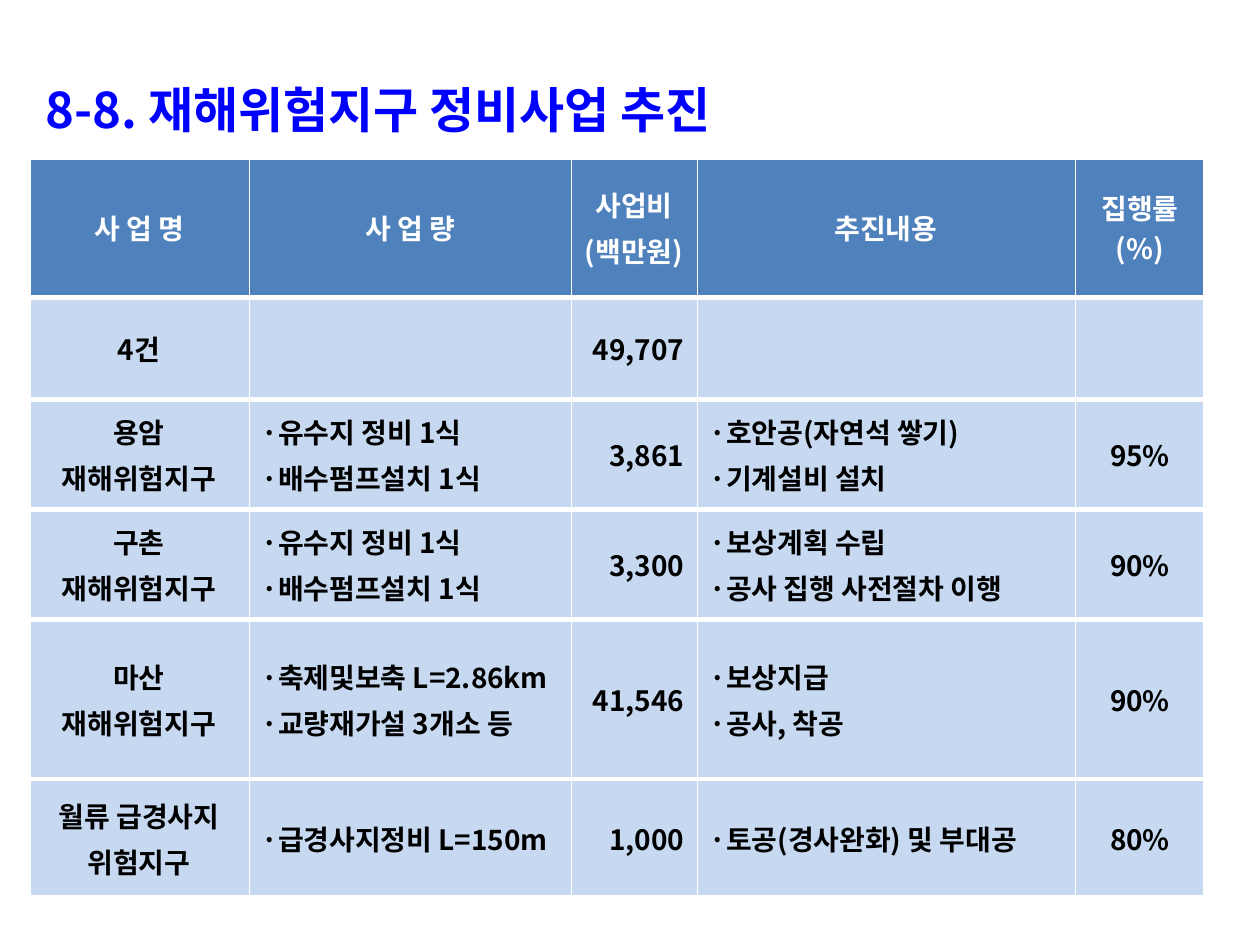
import pptx
import pptx.dml.color
import pptx.enum.shapes
import pptx.enum.text
import pptx.oxml
import pptx.oxml.ns
import pptx.util

SCALE = 914400 / 126
ALIGN = pptx.enum.text.PP_ALIGN
MIDDLE = pptx.enum.text.MSO_ANCHOR.MIDDLE
THEME = {
    "font": "Noto Sans CJK KR",
    "title": pptx.dml.color.RGBColor.from_string("0000FF"),
    "header": pptx.dml.color.RGBColor.from_string("4F81BD"),
    "body": pptx.dml.color.RGBColor.from_string("C6D9F1"),
    "white": pptx.dml.color.RGBColor.from_string("FFFFFF"),
    "black": pptx.dml.color.RGBColor.from_string("000000"),
    "title_size": pptx.util.Pt(28),
    "table_size": pptx.util.Pt(16),
    "thick": pptx.util.Pt(3),
    "thin": pptx.util.Pt(0.25),
    "outline": pptx.util.Pt(0.75),
}


def px(length):
    return pptx.util.Emu(round(length * SCALE))


def format_paragraph(paragraph, size, color, values):
    for name, value in values.items():
        setattr(paragraph, name, value)
    for run in paragraph.runs:
        for name, value in {"name": THEME["font"], "size": size, "bold": True}.items():
            setattr(run.font, name, value)
        run.font.color.rgb = color
        run.font._element.append(pptx.oxml.parse_xml(
            f'<a:ea {pptx.oxml.ns.nsdecls("a")} typeface="{THEME["font"]}"/>'))


presentation = pptx.Presentation()
presentation.slide_width, presentation.slide_height = px(1260), px(945)
slide = presentation.slides.add_slide(presentation.slide_layouts[6])

title = slide.shapes.add_shape(
    pptx.enum.shapes.MSO_SHAPE.RECTANGLE, px(25), px(45), px(1196), px(98))
title.shadow.inherit = False
title.fill.background()
title.line.color.rgb = THEME["white"]
title.line.width = THEME["outline"]
title.text_frame.word_wrap = True
title.text_frame.vertical_anchor = MIDDLE
title.text_frame.text = "8-8. 재해위험지구 정비사업 추진"
paragraph = title.text_frame.paragraphs[0]
properties = paragraph._p.get_or_add_pPr()
properties.set("marL", str(px(71)))
properties.set("indent", str(px(-63)))
format_paragraph(paragraph, THEME["title_size"], THEME["title"],
                 {"alignment": ALIGN.LEFT, "line_spacing": 1.5})

rows = [
    ("사 업 명", "사 업 량", "사업비\n(백만원)", "추진내용", "집행률\n(%)"),
    ("4건", "", "49,707", "", ""),
    ("용암\n재해위험지구", "·유수지 정비 1식\n·배수펌프설치 1식", "3,861",
     "·호안공(자연석 쌓기)\n·기계설비 설치", "95%"),
    ("구촌\n재해위험지구", "·유수지 정비 1식\n·배수펌프설치 1식", "3,300",
     "·보상계획 수립\n·공사 집행 사전절차 이행", "90%"),
    ("마산\n재해위험지구", "·축제및보축 L=2.86km\n·교량재가설 3개소 등", "41,546",
     "·보상지급\n·공사, 착공", "90%"),
    ("월류 급경사지\n위험지구", "·급경사지정비 L=150m", "1,000",
     "·토공(경사완화) 및 부대공", "80%"),
]
column_widths = [220, 322, 126, 378, 130]
row_heights = [110, 102, 110, 110, 160, 118]
body_alignments = [ALIGN.CENTER, ALIGN.LEFT, ALIGN.RIGHT, ALIGN.LEFT, ALIGN.CENTER]
last_column = len(column_widths) - 1

table = slide.shapes.add_table(
    len(rows), len(column_widths), px(29), px(158),
    px(sum(column_widths)), px(sum(row_heights))).table
for column, width in zip(table.columns, column_widths):
    column.width = px(width)
for row, height in zip(table.rows, row_heights):
    row.height = px(height)

for row_index, texts in enumerate(rows):
    is_header = row_index == 0
    for column_index, text in enumerate(texts):
        cell = table.cell(row_index, column_index)
        borders = {
            "lnL": THEME["thick" if column_index == 0 else "thin"],
            "lnR": THEME["thick" if column_index == last_column else "thin"],
            "lnT": THEME["thick"],
            "lnB": THEME["thick"],
        }
        cell_properties = cell._tc.get_or_add_tcPr()
        for tag, width in borders.items():
            cell_properties.append(pptx.oxml.parse_xml(
                f'<a:{tag} {pptx.oxml.ns.nsdecls("a")} w="{width}"><a:solidFill>'
                f'<a:srgbClr val="{THEME["white"]}"/></a:solidFill></a:{tag}>'))
        cell.fill.solid()
        cell.fill.fore_color.rgb = THEME["header" if is_header else "body"]
        cell.vertical_anchor = MIDDLE
        cell.text_frame.text = text
        for paragraph_index, paragraph in enumerate(cell.text_frame.paragraphs):
            spaced = paragraph_index > 0 and column_index < last_column
            format_paragraph(
                paragraph, THEME["table_size"], THEME["white" if is_header else "black"],
                {"alignment": ALIGN.CENTER if is_header else body_alignments[column_index],
                 "space_before": pptx.util.Pt(3.2 if spaced else 0)})

presentation.save("out.pptx")
